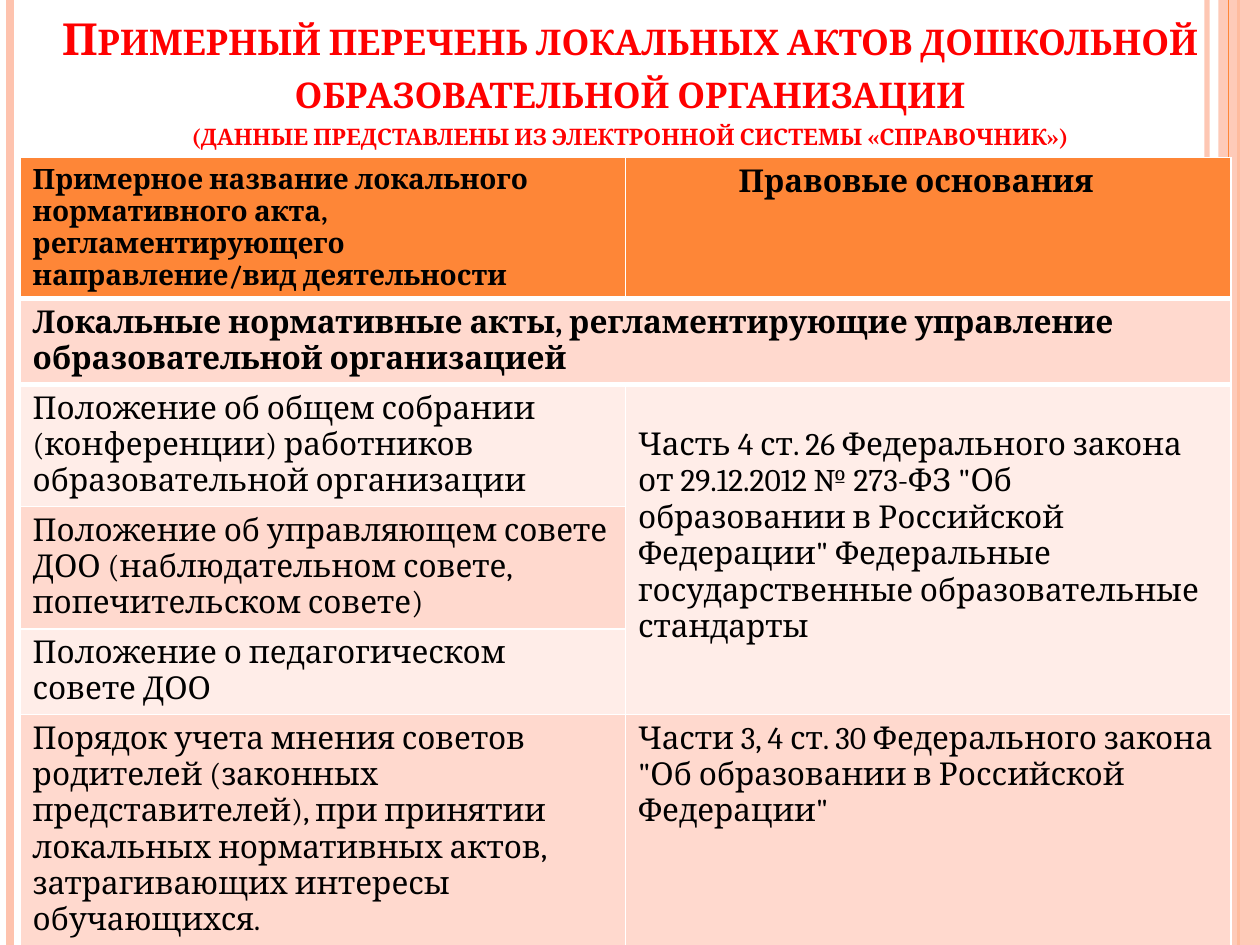
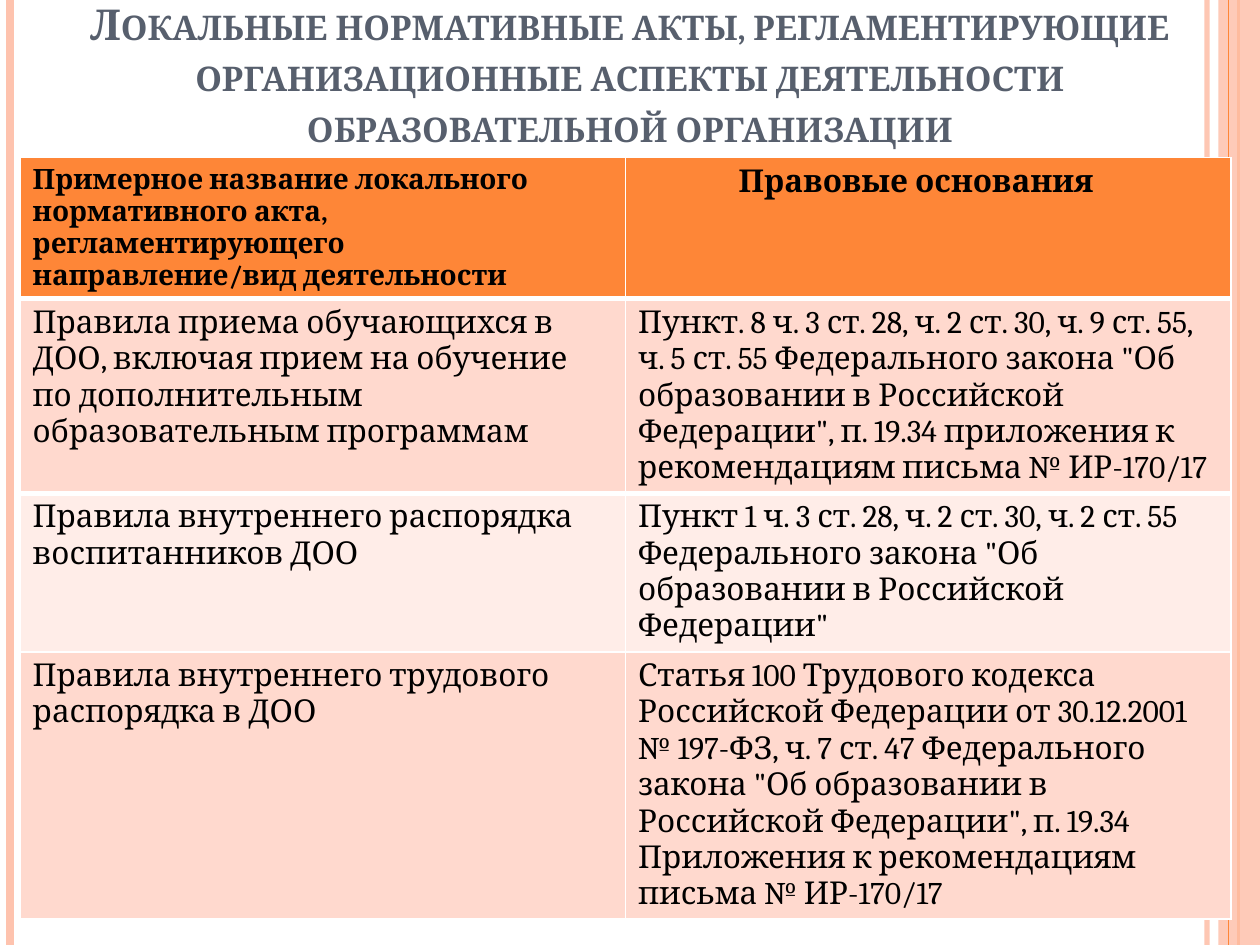
from dataclasses import dataclass

from pptx import Presentation
from pptx.dml.color import RGBColor
from pptx.enum.shapes import MSO_CONNECTOR, MSO_SHAPE
from pptx.enum.text import MSO_ANCHOR, PP_ALIGN
from pptx.oxml import parse_xml
from pptx.oxml.ns import nsdecls, qn
from pptx.oxml.xmlchemy import OxmlElement
from pptx.util import Inches, Pt


@dataclass(frozen=True)
class Theme:
    font: str = "Cambria"
    black: str = "000000"
    white: str = "FFFFFF"
    red: str = "FF0000"
    slate: str = "575F6D"
    orange: str = "FE8637"
    peach: str = "FEC3AE"
    dark: str = "FFD9CE"
    light: str = "FFEDE8"
    label: float = 16
    text: float = 18
    lead: float = 25.2
    note: float = 16.2
    head: float = 24.3


T = Theme()
PAGE = (0, 0, 10, 7.5)
TITLE = (0, 0, 10, 1.25)
GRID = (0.16, 1.25, 9.61)
LABELS = ("Примерное название локального нормативного акта, "
          "регламентирующего направление/вид деятельности",
          "Правовые основания")
TOP_ROW = 1.11


def color(code):
    return RGBColor.from_string(code)


def style(para, size, code, bold=False):
    for run in para.runs:
        font = run.font
        font.name, font.size, font.bold = T.font, Pt(size), bold
        font.color.rgb = color(code)


def fade(shape, share):
    """Make the shape's colour partly transparent."""
    for node in shape._element.spPr.iter(qn("a:srgbClr")):
        alpha = OxmlElement("a:alpha")
        alpha.set("val", str(share * 1000))
        node.append(alpha)


def add_rule(slide, box, x, code, width):
    """Full-height vertical line, x measured from the left of the box."""
    left, top, _, high = box
    x = Inches(left + x)
    rule = slide.shapes.add_connector(
        MSO_CONNECTOR.STRAIGHT, x, Inches(top), x, Inches(top + high))
    rule.line.color.rgb = color(code)
    rule.line.width = Pt(width)
    rule._element.spPr.append(OxmlElement("a:effectLst"))
    return rule


def add_bands(slide, box):
    left, top, wide, high = box
    fade(add_rule(slide, box, wide - 0.42, T.peach, 3), 93)
    add_rule(slide, box, 0.08, T.peach, 4.5)
    add_rule(slide, box, wide - 0.17, T.orange, 1.5)
    band = slide.shapes.add_shape(
        MSO_SHAPE.RECTANGLE, Inches(left + wide - 0.33), Inches(top),
        Inches(0.33), Inches(high))
    band.shadow.inherit = False
    band.fill.solid()
    band.fill.fore_color.rgb = color(T.peach)
    band.line.fill.background()
    fade(band, 87)
    add_rule(slide, box, wide - 0.25, T.orange, 0.75)


def set_title(slide, box, lines, code):
    """Lines are pairs of text and size, set in bold small capitals."""
    title = slide.shapes.title
    title.left, title.top, title.width, title.height = map(Inches, box)
    frame = title.text_frame
    frame.word_wrap = True
    frame.vertical_anchor = MSO_ANCHOR.BOTTOM
    frame.text = "\n".join(text for text, _ in lines)
    for para, (_, size) in zip(frame.paragraphs, lines):
        para.alignment = PP_ALIGN.CENTER
        style(para, size, code, True)
        for run in para.runs:
            run._r.get_or_add_rPr().set("cap", "small")


def fill_cell(cell, text, back, size=T.text, bold=False):
    cell.fill.solid()
    cell.fill.fore_color.rgb = color(back)
    cell.text = text
    style(cell.text_frame.paragraphs[0], size, T.black, bold)


def edge_cell(cell, side, width):
    """Draw one white border of a cell; side is L, R, T or B."""
    cell._tc.get_or_add_tcPr().insert(0, parse_xml(
        f'<a:ln{side} {nsdecls("a")} w="{Pt(width)}"><a:solidFill>'
        f'<a:srgbClr val="{T.white}"/></a:solidFill></a:ln{side}>'))


def add_grid(slide, box, rows):
    """Rows are (height, left text, right text) below the shared labels."""
    left, top, wide = box
    highs = [TOP_ROW] + [row[0] for row in rows]
    frame = slide.shapes.add_table(
        len(highs), 2, Inches(left), Inches(top), Inches(wide), Inches(sum(highs)))
    table = frame.table
    for line, high in zip(table.rows, highs):
        line.height = Inches(high)

    # Label row with a thick lower edge
    for col, (text, size) in enumerate(zip(LABELS, (T.label, T.text))):
        fill_cell(table.cell(0, col), text, T.orange, size, True)
        edge_cell(table.cell(0, col), "B", 3)
        edge_cell(table.cell(1, col), "T", 3)
    right = table.cell(0, 1)
    right.text_frame.paragraphs[0].alignment = PP_ALIGN.CENTER
    right.margin_right = Inches(0.29)

    # Body rows in alternating tints
    for num, (_, *texts) in enumerate(rows, 1):
        back = T.dark if num % 2 else T.light
        for col, text in enumerate(texts):
            fill_cell(table.cell(num, col), text, back)
    return table


def add_page(deck, lines, code, rows):
    slide = deck.slides.add_slide(deck.slide_layouts[5])
    add_bands(slide, PAGE)
    set_title(slide, TITLE, lines, code)
    return add_grid(slide, GRID, rows)


def add_list(deck):
    table = add_page(deck, [
        ("Примерный перечень локальных актов дошкольной образовательной организации", T.lead),
        ("(данные представлены из электронной системы «справочник»)", T.note),
    ], T.red, [
        (0.68, "Локальные нормативные акты, регламентирующие управление "
               "образовательной организацией", ""),
        (0.97, "Положение об общем собрании (конференции) работников "
               "образовательной организации",
         "Часть 4 ст. 26 Федерального закона от 29.12.2012 № 273-ФЗ \"Об образовании "
         "в Российской Федерации\" Федеральные государственные образовательные стандарты"),
        (0.97, "Положение об управляющем совете ДОО (наблюдательном совете, "
               "попечительском совете)", ""),
        (0.68, "Положение о педагогическом совете ДОО", ""),
        (1.83, "Порядок учета мнения советов родителей (законных представителей), при "
               "принятии локальных нормативных актов, затрагивающих интересы обучающихся.",
         "Части 3, 4 ст. 30 Федерального закона \"Об образовании в Российской Федерации\""),
    ])
    # Section heading across both columns
    group = table.cell(1, 0)
    group.merge(table.cell(1, 1))
    style(group.text_frame.paragraphs[0], T.text, T.black, True)
    # One legal ground for three acts, set one line lower
    ground = table.cell(2, 1)
    ground.merge(table.cell(4, 1))
    ground.margin_top = Inches(0.34)


def add_rules(deck):
    add_page(deck, [
        ("Локальные нормативные акты, регламентирующие организационные аспекты "
         "деятельности образовательной организации", T.head),
    ], T.slate, [
        (1.54, "Правила приема обучающихся в ДОО, включая прием на обучение по "
               "дополнительным образовательным программам",
         "Пункт. 8 ч. 3 ст. 28, ч. 2 ст. 30, ч. 9 ст. 55, ч. 5 ст. 55 Федерального закона "
         "\"Об образовании в Российской Федерации\", п. 19.34 приложения к рекомендациям "
         "письма № ИР-170/17"),
        (1.26, "Правила внутреннего распорядка воспитанников ДОО",
         "Пункт 1 ч. 3 ст. 28, ч. 2 ст. 30, ч. 2 ст. 55 Федерального закона "
         "\"Об образовании в Российской Федерации\""),
        (2.12, "Правила внутреннего трудового распорядка в ДОО",
         "Статья 100 Трудового кодекса Российской Федерации от 30.12.2001 № 197-ФЗ, "
         "ч. 7 ст. 47 Федерального закона \"Об образовании в Российской Федерации\", "
         "п. 19.34 Приложения к рекомендациям письма № ИР-170/17"),
    ])


def main():
    deck = Presentation()
    deck.slide_width, deck.slide_height = map(Inches, PAGE[2:])
    add_list(deck)
    add_rules(deck)
    deck.save("out.pptx")


if __name__ == "__main__":
    main()
